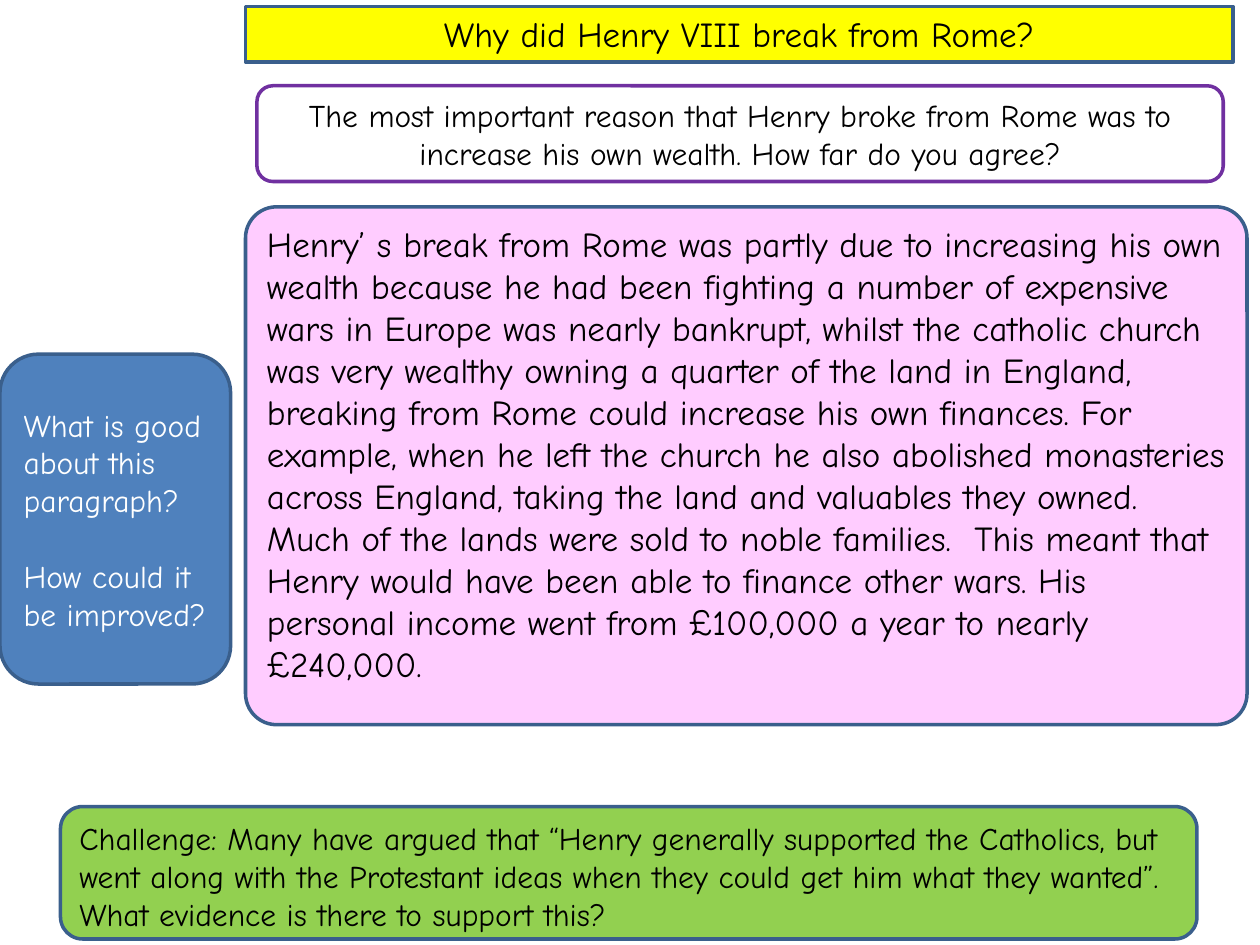
from lxml.etree import SubElement
from pptx import Presentation
from pptx.dml.color import RGBColor
from pptx.enum.shapes import MSO_SHAPE as Shape
from pptx.enum.text import MSO_ANCHOR as Anchor, MSO_AUTO_SIZE as AutoSize, PP_ALIGN as Align
from pptx.oxml.ns import qn
from pptx.util import Cm, Pt

FONT = "Comic Neue"
COLOURS = {
    "black": "000000", "white": "FFFFFF", "navy": "3A5F8C", "purple": "7030A0",
    "yellow": "FFFF00", "pink": "FFCCFF", "blue": "4F81BD", "green": "92D050",
}

# Content: places are left, top, width, height in centimetres
TITLE = {
    "place": (4.95, 0.13, 19.91, 1.12), "fill": "yellow", "size": 20,
    "align": Align.CENTER, "text": ["Why did Henry VIII break from Rome?"],
}
BOXES = [
    {   # Challenge
        "place": (1.22, 16.26, 22.91, 2.67), "fill": "green",
        "shape": Shape.FLOWCHART_ALTERNATE_PROCESS,
        "text": ["Challenge: Many have argued that “Henry generally supported the "
                 "Catholics, but went along with the Protestant ideas when they could "
                 "get him what they wanted”. What evidence is there to support this?"],
    },
    {   # Exam question
        "place": (5.18, 1.73, 19.48, 1.93), "fill": "white", "line": "purple",
        "align": Align.CENTER, "anchor": Anchor.MIDDLE,
        "text": ["The most important reason that Henry broke from Rome was to "
                 "increase his own wealth. How far do you agree?"],
    },
    {   # Sample paragraph
        "place": (4.95, 4.17, 20.19, 10.44), "fill": "pink", "size": 20, "corner": 0.06,
        "text": ["Henry’ s break from Rome was partly due to increasing his own wealth "
                 "because he had been fighting a number of expensive wars in Europe was "
                 "nearly bankrupt, whilst the catholic church was very wealthy owning a "
                 "quarter of the land in England, breaking from Rome could increase his "
                 "own finances. For example, when he left the church he also abolished "
                 "monasteries across England, taking the land and valuables they owned. "
                 "Much of the lands were sold to noble families.  This meant that Henry "
                 "would have been able to finance other wars. His personal income went "
                 "from £100,000 a year to nearly £240,000."],
    },
    {   # Discussion prompts
        "place": (0, 7.14, 4.65, 6.65), "fill": "blue", "ink": "white",
        "anchor": Anchor.MIDDLE,
        "text": ["What is good about this paragraph?", "How could it be improved?"],
    },
]


def colour(name):
    return RGBColor.from_string(COLOURS[name])


def style_box(box, item):
    """Apply fill, outline and text to a placeholder or shape."""
    box.fill.solid()
    box.fill.fore_color.rgb = colour(item["fill"])
    box.line.color.rgb = colour(item.get("line", "navy"))
    box.line.width = Pt(2)

    frame = box.text_frame
    frame.word_wrap = True
    frame.auto_size = AutoSize.NONE
    frame.vertical_anchor = item.get("anchor", Anchor.TOP)
    size = item.get("size", 18)
    for index, text in enumerate(item["text"]):
        para = frame.add_paragraph() if index else frame.paragraphs[0]
        para.text = text
        para.alignment = item.get("align", Align.LEFT)
        para.space_before = Pt(1.2 * size if index else 0)
        para.font.name = FONT
        para.font.size = Pt(size)
        para.font.color.rgb = colour(item.get("ink", "black"))


def add_title(page, item):
    """Turn the title placeholder into a rounded banner."""
    title = page.shapes.title
    title.left, title.top, title.width, title.height = map(Cm, item["place"])
    outline = SubElement(title.element.spPr, qn("a:prstGeom"), prst="roundRect")
    SubElement(outline, qn("a:avLst"))
    style_box(title, item)


def add_box(page, item):
    box = page.shapes.add_shape(item.get("shape", Shape.ROUNDED_RECTANGLE),
                                *map(Cm, item["place"]))
    box.shadow.inherit = False
    if "corner" in item:
        box.adjustments[0] = item["corner"]
    style_box(box, item)


def main():
    deck = Presentation()
    deck.slide_width, deck.slide_height = Cm(25.4), Cm(19.05)
    page = deck.slides.add_slide(deck.slide_layouts.get_by_name("Title Only"))
    add_title(page, TITLE)
    for item in BOXES:
        add_box(page, item)
    deck.save("out.pptx")


if __name__ == "__main__":
    main()
